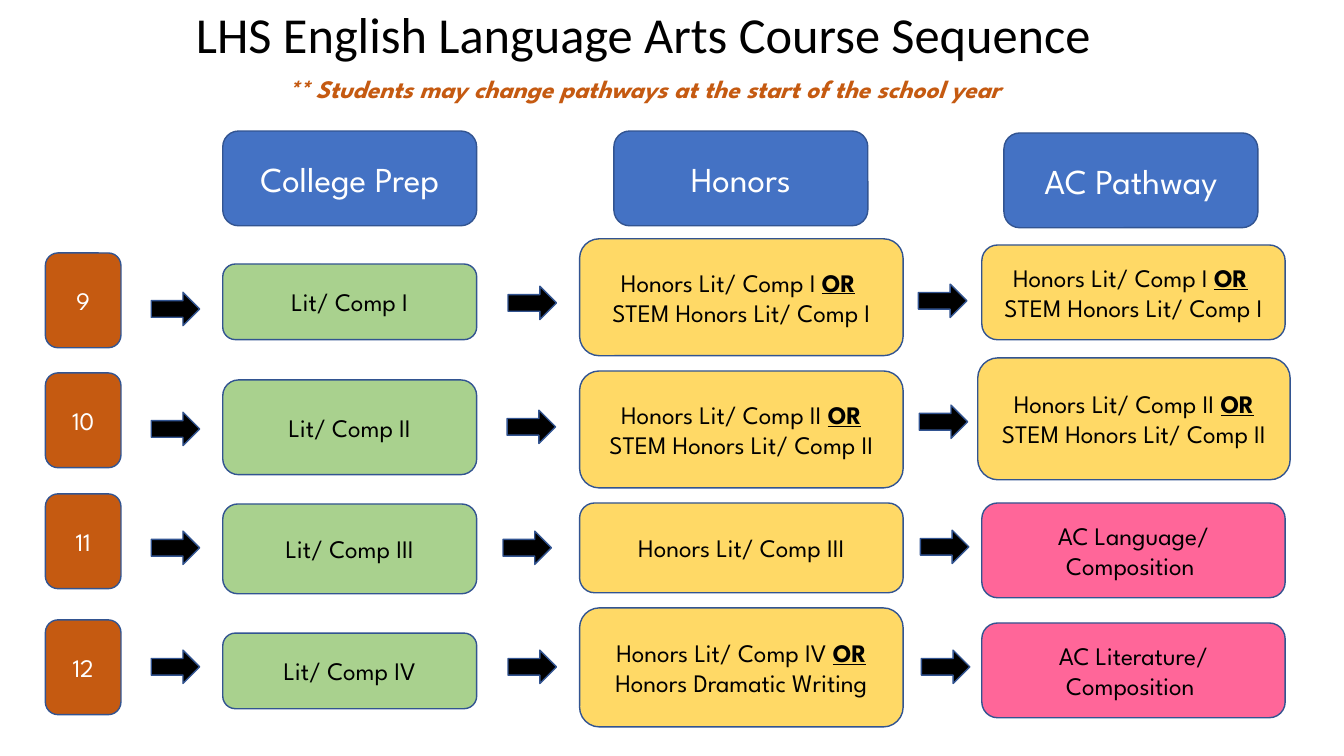
from dataclasses import dataclass

from pptx import Presentation
from pptx.dml.color import RGBColor
from pptx.enum.shapes import MSO_SHAPE
from pptx.enum.text import MSO_ANCHOR, PP_ALIGN
from pptx.shapes.autoshape import Shape
from pptx.slide import Slide
from pptx.text.text import TextFrame
from pptx.util import Pt

ROUNDED = MSO_SHAPE.ROUNDED_RECTANGLE
ARROW = MSO_SHAPE.RIGHT_ARROW
MIDDLE = MSO_ANCHOR.MIDDLE
TOP = MSO_ANCHOR.TOP
CENTER = PP_ALIGN.CENTER


@dataclass(frozen=True)
class Theme:
    black: str = "000000"
    white: str = "FFFFFF"
    outline: str = "325491"
    blue: str = "4472C4"
    rust: str = "C55A11"
    green: str = "A9D18E"
    gold: str = "FFD966"
    pink: str = "FF6699"
    title_font: str = "Calibri"
    font: str = "League Spartan"
    title_size: float = 36
    header_size: float = 25
    body_size: float = 18
    line_width: float = 1


THEME = Theme()


@dataclass(frozen=True)
class Box:
    left: float
    top: float
    width: float
    height: float


@dataclass(frozen=True)
class Course:
    text: str
    box: Box
    fill: str


HEADER_W, CARD_H = 181.4, 67.7
GRADE_X, GRADE_W = 32.4, 54
PREP_X = 159.1
HONORS_X, HONORS_W = 414, 231.1
ADVANCED_X, ADVANCED_W = 701.3, 216.7
ARROW_W, ARROW_H = 34.6, 23.8

HEADERS = [
    ("College Prep", PREP_X, 93.6),
    ("Honors", 438.5, 93.6),
    ("AC Pathway", 717.1, 95),
]
GRADES = [("9", 180.7), ("10", 266.4), ("11", 352.8), ("12", 442.8)]
PREP = [
    ("Lit/ Comp I", 188.6, 54),
    ("Lit/ Comp II", 271.4, CARD_H),
    ("Lit/ Comp III", 360, 64.1),
    ("Lit/ Comp IV", 452.2, 54),
]
FIRST_YEAR = "Honors Lit/ Comp I OR \nSTEM Honors Lit/ Comp I"
SECOND_YEAR = "Honors Lit/ Comp II OR STEM Honors Lit/ Comp II"
HONORS = [
    (FIRST_YEAR, 170.6, 83.5),
    (SECOND_YEAR, 265, 83.5),
    ("Honors Lit/ Comp III", 359.3, 64.1),
    ("Honors Lit/ Comp IV OR Honors Dramatic Writing", 434.2, 85),
]
COURSES = [
    *(Course(text, Box(PREP_X, top, HEADER_W, height), THEME.green)
      for text, top, height in PREP),
    *(Course(text, Box(HONORS_X, top, HONORS_W, height), THEME.gold)
      for text, top, height in HONORS),
    Course(FIRST_YEAR, Box(ADVANCED_X, 175, ADVANCED_W, CARD_H), THEME.gold),
    Course(SECOND_YEAR, Box(698.4, 255.6, 223.2, 87.1), THEME.gold),
    Course("AC Language/ Composition ",
           Box(ADVANCED_X, 359.3, ADVANCED_W, CARD_H), THEME.pink),
    Course("AC Literature/ Composition ",
           Box(ADVANCED_X, 445, ADVANCED_W, CARD_H), THEME.pink),
]
ARROWS = [
    (108, 208.8), (108, 294.5), (108, 379.4), (108, 464.4),
    (362.9, 204.5), (362.2, 293), (359.3, 379.4), (362.9, 464.4),
    (656, 203), (656.6, 289.4), (657.4, 378.7), (658.1, 464.4),
]


def write_text(tf: TextFrame, text: str, size: float, color: str,
               font: str = THEME.font) -> None:
    """Write centred lines, with each "OR" bold and underlined."""
    tf.word_wrap = True
    for i, line in enumerate(text.split("\n")):
        p = tf.paragraphs[0] if i == 0 else tf.add_paragraph()
        p.alignment = CENTER
        for part in filter(None, line.partition("OR")):
            r = p.add_run()
            r.text = part
            r.font.name = font
            r.font.size = Pt(size)
            r.font.color.rgb = RGBColor.from_string(color)
            if part == "OR":
                r.font.bold = True
                r.font.underline = True


def add_outlined(s: Slide, kind: MSO_SHAPE, box: Box, fill: str) -> Shape:
    sp = s.shapes.add_shape(kind, Pt(box.left), Pt(box.top), Pt(box.width), Pt(box.height))
    sp.shadow.inherit = False
    sp.fill.solid()
    sp.fill.fore_color.rgb = RGBColor.from_string(fill)
    sp.line.color.rgb = RGBColor.from_string(THEME.outline)
    sp.line.width = Pt(THEME.line_width)
    return sp


def add_card(s: Slide, text: str, box: Box, fill: str, color: str,
             size: float = THEME.body_size) -> None:
    sp = add_outlined(s, ROUNDED, box, fill)
    sp.text_frame.vertical_anchor = MIDDLE
    write_text(sp.text_frame, text, size, color)


def add_label(s: Slide, text: str, box: Box, size: float, color: str,
              font: str, anchor: MSO_ANCHOR) -> TextFrame:
    tf = s.shapes.add_textbox(
        Pt(box.left), Pt(box.top), Pt(box.width), Pt(box.height)).text_frame
    tf.vertical_anchor = anchor
    write_text(tf, text, size, color, font)
    return tf


def main() -> None:
    prs = Presentation()
    prs.slide_width, prs.slide_height = Pt(960), Pt(540)
    s = prs.slides.add_slide(prs.slide_layouts[6])

    title = add_label(s, "LHS English Language Arts Course Sequence",
                      Box(36, 2.2, 847.4, 48.2), THEME.title_size, THEME.black,
                      THEME.title_font, MIDDLE)
    title.paragraphs[0].line_spacing = 0.9
    note = add_label(s, "** Students may change pathways at the start of the school year",
                     Box(151.2, 49, 618.5, 28.8), THEME.body_size, THEME.rust,
                     THEME.font, TOP)
    for r in note.paragraphs[0].runs:
        r.font.bold = True
        r.font.italic = True

    for text, left, top in HEADERS:
        add_card(s, text, Box(left, top, HEADER_W, CARD_H), THEME.blue,
                 THEME.white, THEME.header_size)
    for text, top in GRADES:
        add_card(s, text, Box(GRADE_X, top, GRADE_W, CARD_H), THEME.rust, THEME.white)
    for course in COURSES:
        add_card(s, course.text, course.box, course.fill, THEME.black)
    for left, top in ARROWS:
        add_outlined(s, ARROW, Box(left, top, ARROW_W, ARROW_H), THEME.black)

    prs.save("out.pptx")


if __name__ == "__main__":
    main()
